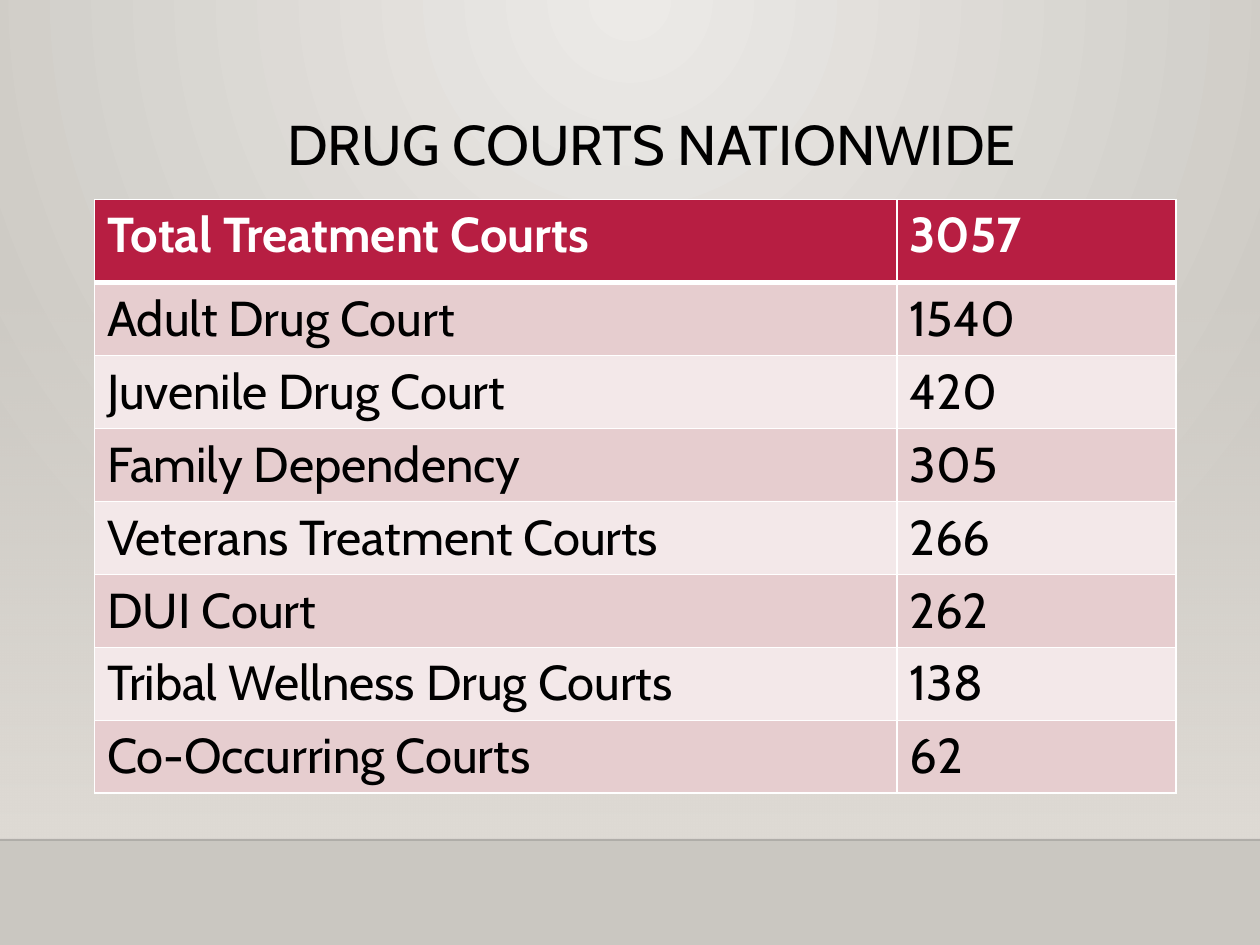
from lxml import etree
from pptx import Presentation
from pptx.dml.color import RGBColor
from pptx.enum.shapes import MSO_CONNECTOR, MSO_SHAPE
from pptx.enum.text import MSO_ANCHOR, PP_ALIGN
from pptx.oxml.ns import qn
from pptx.util import Cm, Pt

TOP = MSO_ANCHOR.TOP
CENTER = PP_ALIGN.CENTER
RECT = MSO_SHAPE.RECTANGLE
LINE = MSO_CONNECTOR.STRAIGHT

# Content
TITLE = "DRUG COURTS NATIONWIDE"
ROWS = [
    ("Total Treatment Courts", "3057"),
    ("Adult Drug Court", "1540"),
    ("Juvenile Drug Court", "420"),
    ("Family Dependency", "305"),
    ("Veterans Treatment Courts", "266"),
    ("DUI Court", "262"),
    ("Tribal Wellness Drug Courts", "138"),
    ("Co-Occurring Courts", "62"),
]
FONT = "Cabin"
COLORS = {
    "glow": "ECEAE7", "edge": "CAC7C1", "wall": "DFDBD5", "rule": "000001",
    "head": "B71E42", "odd": "E6CDCF", "even": "F3E8E9",
    "white": "FFFFFF", "black": "000000",
}

# Layout in cm
WIDTH, HEIGHT = 25.4, 19.05
WALL_TOP, FLOOR = 5.59, 16.93
COLS = (16.17, 5.63)
HEAD_H, ROW_H = 1.68, 1.47


def rgb(name):
    return RGBColor.from_string(COLORS[name])


def add(parent, tag, **attrs):
    node = etree.SubElement(parent, qn(tag))
    for key, val in attrs.items():
        node.set(key, str(val))
    return node


def blend(fill, first, last):
    fill.gradient()
    for stop, name, pos in zip(fill.gradient_stops, (first, last), (0, 1)):
        stop.color.rgb = rgb(name)
        stop.position = pos


def style(par, size, color, bold=False):
    font = par.font
    font.name, font.size, font.bold = FONT, Pt(size), bold
    font.color.rgb = rgb(color)


def border(cell, sides):
    props = cell._tc.get_or_add_tcPr()
    for spot, (side, width) in enumerate(sides.items()):
        line = etree.Element(qn("a:" + side), w=str(Pt(width)))
        add(add(line, "a:solidFill"), "a:srgbClr", val=COLORS["white"])
        props.insert(spot, line)


deck = Presentation()
deck.slide_width, deck.slide_height = Cm(WIDTH), Cm(HEIGHT)
slide = deck.slides.add_slide(deck.slide_layouts[6])
shapes = slide.shapes

# Background: round glow from the top
blend(slide.background.fill, "glow", "edge")
glow = next(slide.element.iter(qn("a:gradFill")))
glow.remove(glow.find(qn("a:lin")))
add(add(glow, "a:path", path="circle"), "a:fillToRect",
    l=43000, t=0, r=43000, b=100000)

# Wall that fades in downwards
wall = shapes.add_shape(RECT, 0, Cm(WALL_TOP), Cm(WIDTH), Cm(FLOOR - WALL_TOP))
wall.shadow.inherit = False
wall.line.fill.background()
blend(wall.fill, "wall", "wall")
wall.fill.gradient_angle = 270
add(next(wall._element.iter(qn("a:srgbClr"))), "a:alpha", val=0)

# Floor line
rule = shapes.add_connector(LINE, 0, Cm(FLOOR), Cm(WIDTH), Cm(FLOOR))
rule.line.width = Pt(1)
rule.line.color.rgb = rgb("rule")
add(next(rule._element.iter(qn("a:srgbClr"))), "a:alpha", val=20000)
add(rule._element.spPr, "a:effectLst")

# Title
box = shapes.add_textbox(Cm(4.01), Cm(2.23), Cm(18.26), Cm(2.92))
frame = box.text_frame
frame.word_wrap = True
frame.vertical_anchor = TOP
par = frame.paragraphs[0]
par.text = TITLE
par.alignment = CENTER
par.line_spacing = 0.9
style(par, 32, "black")

# Table
high = HEAD_H + ROW_H * (len(ROWS) - 1)
table = shapes.add_table(len(ROWS), len(COLS), Cm(1.91), Cm(4.02),
                         Cm(sum(COLS)), Cm(high)).table
for col, width in zip(table.columns, COLS):
    col.width = Cm(width)
for i, texts in enumerate(ROWS):
    head = i == 0
    table.rows[i].height = Cm(HEAD_H if head else ROW_H)
    shade = "head" if head else ("even", "odd")[i % 2]
    sides = {"lnL": 1, "lnR": 1, "lnT": 3 if i == 1 else 1,
             "lnB": 3 if head else 1}
    for j, text in enumerate(texts):
        cell = table.cell(i, j)
        cell.fill.solid()
        cell.fill.fore_color.rgb = rgb(shade)
        border(cell, sides)
        par = cell.text_frame.paragraphs[0]
        par.text = text
        style(par, 28, "white" if head else "black", head)

deck.save("out.pptx")
